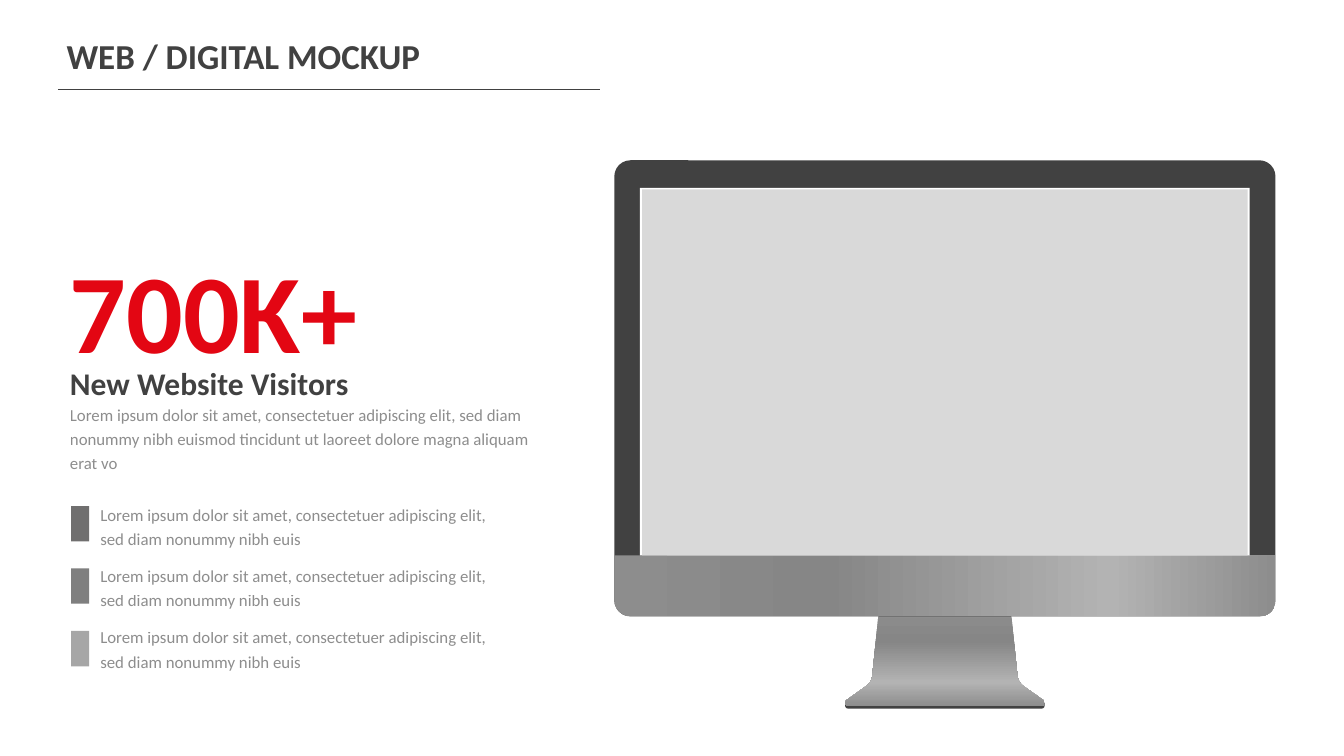
from lxml import etree
from pptx import Presentation
from pptx.dml.color import RGBColor
from pptx.enum.shapes import MSO_CONNECTOR, MSO_SHAPE
from pptx.enum.text import MSO_ANCHOR, MSO_AUTO_SIZE, PP_ALIGN
from pptx.oxml.ns import qn
from pptx.util import Emu, Inches, Pt

RECT = MSO_SHAPE.RECTANGLE
ROUNDED = MSO_SHAPE.ROUNDED_RECTANGLE
ROUND_ENDS = MSO_SHAPE.ROUND_2_SAME_RECTANGLE
STRAIGHT = MSO_CONNECTOR.STRAIGHT
TOP, LEFT, NO_FIT = MSO_ANCHOR.TOP, PP_ALIGN.LEFT, MSO_AUTO_SIZE.NONE

COLORS = {"dark": "414141", "red": "E30613", "white": "FFFFFF", "screen": "D9D9D9",
          "marker1": "706F6F", "marker2": "7F7F7F", "marker3": "A6A6A6"}
METAL = [(0, "8D8D8D"), (32, "868686"), (75, "B3B3B3"), (100, "8D8D8D")]
COLUMNS, ROWS = 26.67, 15
MARGIN = 1.29
LOREM = "Lorem ipsum dolor sit amet, consectetuer adipiscing elit, sed diam nonummy nibh euis"


def rgb(name):
    return RGBColor.from_string(COLORS[name])


def bezier(p0, p1, p2, p3, steps=8):
    """Points along a cubic curve, both ends included."""
    points = []
    for step in range(steps + 1):
        t = step / steps
        weights = ((1 - t) ** 3, 3 * t * (1 - t) ** 2, 3 * t * t * (1 - t), t ** 3)
        points.append(tuple(sum(w * p[axis] for w, p in zip(weights, (p0, p1, p2, p3)))
                            for axis in (0, 1)))
    return points


class Page:
    """Style and slide; lengths are columns and rows of the COLUMNS x ROWS grid."""

    font = "Calibri"
    line_spacing = 1.2

    def __init__(self, deck):
        self.column = deck.slide_width / COLUMNS
        self.row = deck.slide_height / ROWS
        self.slide = deck.slides.add_slide(deck.slide_layouts[1])
        self.shapes = self.slide.shapes

    def place(self, left, top, width, height):
        return (Emu(round(left * self.column)), Emu(round(top * self.row)),
                Emu(round(width * self.column)), Emu(round(height * self.row)))

    def set_text(self, box, texts, size, color="dark", bold=False, alpha=None, gap=0):
        frame = box.text_frame
        frame.word_wrap = True
        frame.auto_size = NO_FIT
        frame.vertical_anchor = TOP
        for index, text in enumerate(texts):
            para = frame.add_paragraph() if index else frame.paragraphs[0]
            para.alignment = LEFT
            para.line_spacing = self.line_spacing
            para.space_before = Pt(0)
            para.space_after = Pt(gap)
            span = para.add_run()
            span.text = text
            span.font.name = self.font
            span.font.size = Pt(size)
            span.font.bold = bold
            span.font.color.rgb = rgb(color)
            if alpha:
                tint = span._r.find(".//" + qn("a:srgbClr"))
                etree.SubElement(tint, qn("a:alpha"), val=str(alpha * 1000))

    def text(self, area, text, size, **style):
        self.set_text(self.shapes.add_textbox(*self.place(*area)), [text], size, **style)

    def fill_placeholder(self, box, area, texts, size, **style):
        box.left, box.top, box.width, box.height = self.place(*area)
        self.set_text(box, texts, size, **style)

    def title(self, area, text, size):
        self.fill_placeholder(self.shapes.title, area, [text], size, bold=True)

    def plain_list(self, area, texts, size, **style):
        box = self.slide.placeholders[1]
        self.fill_placeholder(box, area, texts, size, **style)
        for para in box.text_frame.paragraphs:
            props = para._p.get_or_add_pPr()
            props.set("marL", "0")
            props.set("indent", "0")
            etree.SubElement(props, qn("a:buNone"))

    def rule(self, left, right, top, color, width):
        x, y, length, _ = self.place(left, top, right - left, 0)
        line = self.shapes.add_connector(STRAIGHT, x, y, x + length, y)
        line.line.color.rgb = rgb(color)
        line.line.width = Pt(width)
        etree.SubElement(line._element.spPr, qn("a:effectLst"))

    def paint(self, shape, color=None, angle=0):
        """Flat fill, or the metal gradient when no colour is given."""
        shape.shadow.inherit = False
        shape.line.fill.background()
        if color:
            shape.fill.solid()
            shape.fill.fore_color.rgb = rgb(color)
            return
        shape.fill.gradient()
        shape.fill.gradient_angle = angle
        stops = shape._element.find(".//" + qn("a:gsLst"))
        for stop in list(stops):
            stops.remove(stop)
        for position, tone in METAL:
            stop = etree.SubElement(stops, qn("a:gs"), pos=str(position * 1000))
            etree.SubElement(stop, qn("a:srgbClr"), val=tone)

    def shape(self, kind, area, color=None, corners=()):
        shape = self.shapes.add_shape(kind, *self.place(*area))
        for index, corner in enumerate(corners):
            shape.adjustments[index] = corner
        self.paint(shape, color)

    def outline(self, points, angle):
        points = [self.place(x, y, 0, 0)[:2] for x, y in points]
        builder = self.shapes.build_freeform(*points[0])
        builder.add_line_segments(points[1:], close=True)
        self.paint(builder.convert_to_shape(), angle=angle)


def draw_text(page):
    page.rule(1.15, 11.9, 1.77, "dark", 0.5)
    page.title((1.22, 0.47, 12.76, 1), "WEB / DIGITAL MOCKUP", 50)
    page.text((MARGIN, 4.2, 9.49, 3.08), "700K+", 160, color="red", bold=True)
    page.text((MARGIN, 7.02, 9.49, 1.01), "New Website Visitors", 45, bold=True)
    page.text((MARGIN, 7.9, 9.64, 1.56),
              "Lorem ipsum dolor sit amet, consectetuer adipiscing elit, sed diam nonummy "
              "nibh euismod tincidunt ut laoreet dolore magna aliquam erat vo", 24, alpha=60)
    page.plain_list((1.89, 9.88, 8.33, 3.54), [LOREM] * 3, 24, alpha=60, gap=18.5)
    for index, color in enumerate(("marker1", "marker2", "marker3")):
        page.shape(RECT, (1.41, 10.04 + 1.24 * index, 0.36, 0.7), color)


def draw_monitor(page):
    left, top, width, height = 12.19, 3.18, 13.12, 9.05
    chin, radius = 1.21, 0.32
    chin_top = top + height - chin
    center = left + width / 2

    page.shape(ROUND_ENDS, (center - 1.98, 13.94, 3.96, 0.12), "dark", (0, 0.5))
    half = [(-1.31, 12.12)]
    half += bezier((-1.44, 13.4), (-1.45, 13.49), (-1.49, 13.57), (-1.57, 13.62))
    half += bezier((-1.95, 13.89), (-2, 13.93), (-1.98, 14.01), (-1.91, 14.01))
    mirrored = [(-x, y) for x, y in reversed(half)]
    page.outline([(center + x, y) for x, y in half + mirrored], 270)

    page.shape(ROUNDED, (left, top, width, height), "dark", (radius / height,))
    page.shape(ROUND_ENDS, (left, chin_top, width, chin), corners=(0, radius / chin))
    page.shape(RECT, (center - 6.05, 3.73, 12.1, chin_top - 3.73), "white")
    page.shape(RECT, (center - 6.01, 3.76, 12.02, chin_top - 3.76), "screen")


def main():
    deck = Presentation()
    deck.slide_width, deck.slide_height = Inches(COLUMNS), Inches(ROWS)
    page = Page(deck)
    draw_text(page)
    draw_monitor(page)
    deck.save("out.pptx")


if __name__ == "__main__":
    main()
